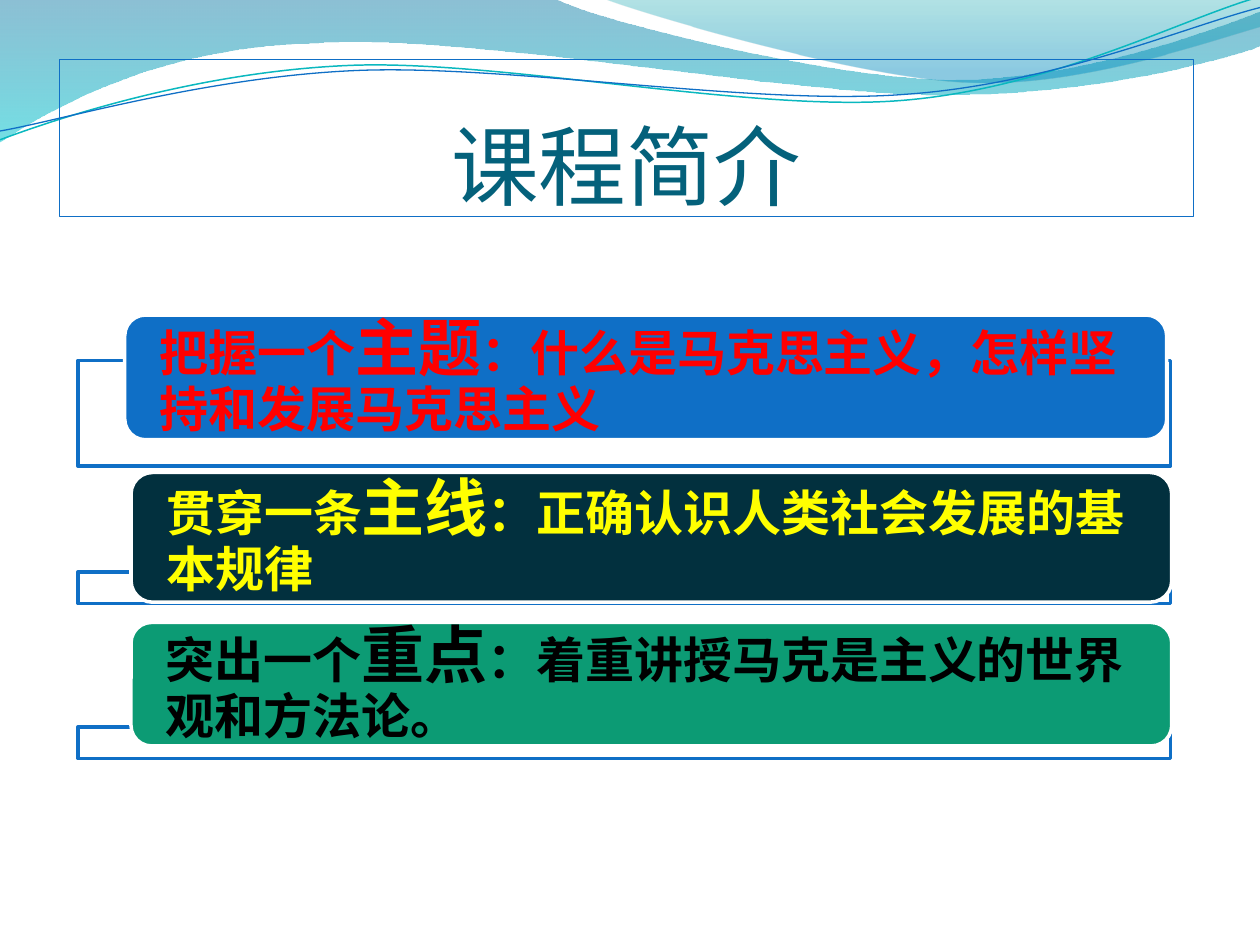
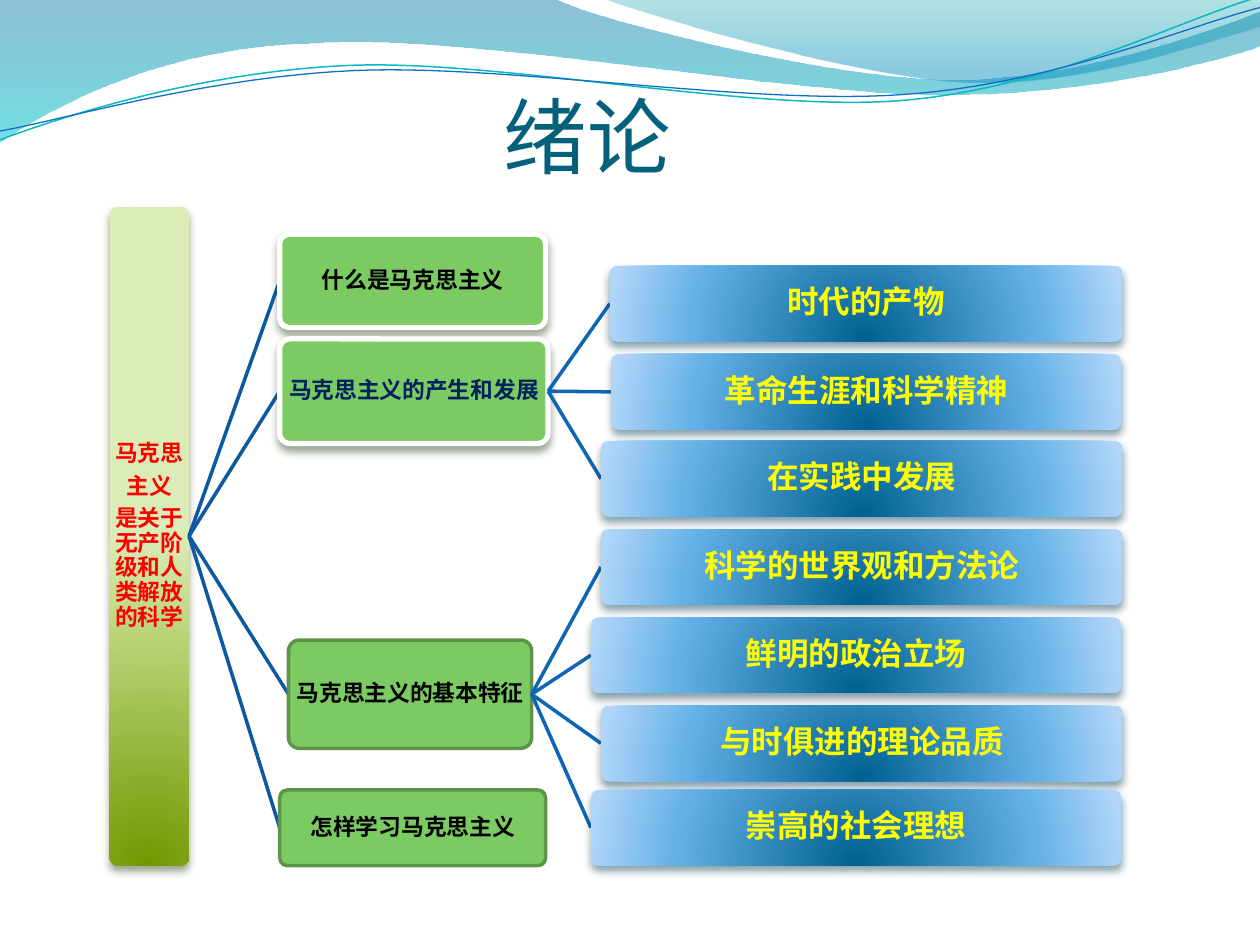
"""Build two course slides: the introduction and the outline of the preface."""
from lxml import etree
from pptx import Presentation
from pptx.dml.color import RGBColor as RGB
from pptx.enum.shapes import MSO_CONNECTOR as CONNECTOR, MSO_SHAPE as SHAPE
from pptx.enum.text import MSO_ANCHOR as ANCHOR, MSO_AUTO_SIZE as AUTO_SIZE, PP_ALIGN as ALIGN
from pptx.oxml.ns import qn
from pptx.util import Inches, Pt

WHITE = RGB(0xFF, 0xFF, 0xFF)
BLACK = RGB(0x00, 0x00, 0x00)
RED = RGB(0xFF, 0x00, 0x00)
YELLOW = RGB(0xFF, 0xFF, 0x00)
NAVY = RGB(0x00, 0x20, 0x60)
BLUE = RGB(0x0F, 0x6F, 0xC6)
TEAL = RGB(0x0A, 0xB8, 0xBF)
TITLE_COLOR = RGB(0x04, 0x61, 0x7B)
DARK_TEAL = RGB(0x02, 0x30, 0x3E)
SEA_GREEN = RGB(0x0C, 0x9B, 0x74)
GREEN = RGB(0x7C, 0xCA, 0x62)
GREEN_EDGE = RGB(0x5C, 0x95, 0x49)
BRANCH_BLUE = RGB(0x0C, 0x59, 0x9F)
LEAF_BLUE = RGB(0x0E, 0x65, 0xB4)
OLIVE_STOPS = [(0, "729800", 100), (68, "B8D275", 100), (100, "DBECB9", 100)]
BLUE_STOPS = [(0, "006091", 100), (68, "64B1E7", 100), (100, "B1D6F9", 100)]
TOPIC_FONT = "Vollkorn"


def set_gradient(shape, stops, radial):
    """Fill a shape with (position, colour, opacity) stops."""
    shape.fill.background()
    no_fill = shape.element.spPr.find(qn("a:noFill"))
    gradient = etree.Element(qn("a:gradFill"), rotWithShape="1")
    stop_list = etree.SubElement(gradient, qn("a:gsLst"))
    for position, color, opacity in stops:
        stop = etree.SubElement(stop_list, qn("a:gs"), pos=str(position * 1000))
        paint = etree.SubElement(stop, qn("a:srgbClr"), val=color)
        if opacity < 100:
            etree.SubElement(paint, qn("a:alpha"), val=str(opacity * 1000))
    if radial:
        circle = etree.SubElement(gradient, qn("a:path"), path="circle")
        etree.SubElement(circle, qn("a:fillToRect"), l="50000", t="130000", r="50000", b="-30000")
    else:
        etree.SubElement(gradient, qn("a:lin"), ang="5400000", scaled="0")
    no_fill.getparent().replace(no_fill, gradient)


def add_box(page, kind, frame, fill, edge=None, width=0, shadow=None):
    """Add a shape with a solid or radial fill, an edge and a soft shadow."""
    box = page.shapes.add_shape(kind, *[Inches(length) for length in frame])
    box.shadow.inherit = False
    if isinstance(fill, list):
        set_gradient(box, fill, True)
    else:
        box.fill.solid()
        box.fill.fore_color.rgb = fill
    if edge:
        box.line.color.rgb = edge
        box.line.width = Pt(width)
    else:
        box.line.fill.background()
    if shadow:
        effects = box.element.spPr.find(qn("a:effectLst"))
        outer = etree.SubElement(effects, qn("a:outerShdw"), blurRad=str(Pt(4.5)),
                                 dist=str(Pt(3)), dir="5400000", rotWithShape="0")
        paint = etree.SubElement(outer, qn("a:srgbClr"), val=shadow)
        etree.SubElement(paint, qn("a:alpha"), val="48000")
    return box


deck = Presentation()
deck.slide_width, deck.slide_height = Inches(10), Inches(7.5)
layout = deck.slide_layouts[5]
intro, outline = [deck.slides.add_slide(layout) for _ in range(2)]

waves = [
    ((0, 0), [[(4.4, -0.01)], [(4.76, 0.17), (6.64, 0.63), (7.58, 0.63)],
              [(8.53, 0.63), (9.58, 0.26), (10, 0.09)], [(10.01, 0.36)],
              [(9.83, 0.44), (8.7, 0.76), (7.46, 0.75)],
              [(6.22, 0.75), (3.82, 0.28), (2.57, 0.34)],
              [(1.29, 0.36), (0.46, 0.83), (-0.01, 1.13)], [(0, 0)]],
     [(0, "0074A1", 45), (100, "00C6CF", 55)], None, 0),
    ((4.79, -0.01), [[(5.09, 0.11), (6.82, 0.62), (7.69, 0.65)],
                     [(8.56, 0.69), (9.61, 0.32), (10, 0.21)], [(10, 0)], [(4.79, -0.01)]],
     [(0, "00A1A9", 30), (80, "008BBF", 45)], None, 0),
    ((0, 1.11), [[(0.48, 0.93), (1.58, 0.57), (2.77, 0.52)],
                 [(3.95, 0.47), (5.93, 0.89), (7.13, 0.8)],
                 [(8.33, 0.71), (9.38, 0.15), (9.98, -0.02)]], None, TEAL, 0.85),
    ((0, 1.04), [[(0.47, 0.96), (1.64, 0.61), (2.83, 0.56)],
                 [(4.03, 0.51), (5.97, 0.84), (7.17, 0.75)],
                 [(8.36, 0.67), (9.41, 0.21), (10, 0.06)]], None, BLUE, 0.75),
]
for order, (start, segments, stops, color, width) in enumerate(waves):
    builder = intro.shapes.build_freeform(Inches(start[0]), Inches(start[1]))
    points = [(Inches(x), Inches(y)) for segment in segments for x, y in segment]
    builder.add_line_segments(points, close=bool(stops))
    wave = builder.convert_to_shape()
    wave.shadow.inherit = False
    strokes = iter(list(wave.element.iter(qn("a:lnTo"))))
    for segment in segments:
        pieces = [next(strokes) for _ in segment]
        if len(pieces) == 3:
            curve = etree.Element(qn("a:cubicBezTo"))
            pieces[0].addprevious(curve)
            for piece in pieces:
                curve.append(piece[0])
                piece.getparent().remove(piece)
    if stops:
        set_gradient(wave, stops, False)
        wave.line.fill.background()
    else:
        wave.fill.background()
        wave.line.color.rgb = color
        wave.line.width = Pt(width)
    deck.slide_master.shapes.element.insert(2 + order, wave.element)

titles = [
    (intro, "课程简介", (0.47, 0.47, 9, 1.25), "Calibri", 50, 0, 0),
    (outline, "绪论", (0.39, 0.78, 9, 1.17), "Arial", 47.7, 0.46, 0.48),
]
for page, text, frame, font, size, right, bottom in titles:
    title = page.shapes.title
    title.left, title.top, title.width, title.height = [Inches(length) for length in frame]
    text_frame = title.text_frame
    text_frame.auto_size = AUTO_SIZE.NONE
    text_frame.vertical_anchor = ANCHOR.BOTTOM
    text_frame.margin_left, text_frame.margin_top = 0, Inches(0.05)
    text_frame.margin_right, text_frame.margin_bottom = Inches(right), Inches(bottom)
    para = text_frame.paragraphs[0]
    para.alignment = ALIGN.CENTER
    span = para.add_run()
    span.text = text
    span.font.name, span.font.size, span.font.color.rgb = font, Pt(size), TITLE_COLOR
intro.shapes.title.line.color.rgb = BLUE
intro.shapes.title.line.width = Pt(0.75)

goals = [
    ((2.86, 0.84), (0.99, 2.5, 8.27, 0.99), BLUE, RED,
     ("把握一个", "主题", "：什么是马克思主义，怎样坚持和发展马克思主义")),
    ((4.54, 0.25), (1.04, 3.75, 8.26, 1.03), DARK_TEAL, YELLOW,
     ("贯穿一条", "主线", "：正确认识人类社会发展的基本规律")),
    ((5.77, 0.25), (1.04, 4.94, 8.26, 0.98), SEA_GREEN, BLACK,
     ("突出一个", "重点", "：着重讲授马克是主义的世界观和方法论。")),
]
for (top, height), frame, fill, color, texts in goals:
    add_box(intro, SHAPE.RECTANGLE, (0.62, top, 8.67, height), WHITE, BLUE, 2)
    goal = add_box(intro, SHAPE.ROUNDED_RECTANGLE, frame, fill, WHITE, 2)
    text_frame = goal.text_frame
    text_frame.word_wrap = True
    text_frame.vertical_anchor = ANCHOR.MIDDLE
    text_frame.margin_left = text_frame.margin_right = Inches(0.23)
    text_frame.margin_top = text_frame.margin_bottom = 0
    para = text_frame.paragraphs[0]
    para.alignment = ALIGN.LEFT
    para.line_spacing = 0.9
    for text, size in zip(texts, (28, 36, 28)):
        span = para.add_run()
        span.text = text
        span.font.name, span.font.size, span.font.bold = TOPIC_FONT, Pt(size), True
        span.font.color.rgb = color

root_style = (OLIVE_STOPS, None, 0, "3A4519", "Arial", 13, None)
raised_style = (GREEN, WHITE, 3, "2B4821", TOPIC_FONT, 13, BRANCH_BLUE)
flat_style = (GREEN, GREEN_EDGE, 2, None, TOPIC_FONT, 13, BRANCH_BLUE)
leaf_style = (BLUE_STOPS, None, 0, "00374C", TOPIC_FONT, 18, LEAF_BLUE)
ROOT, ORIGIN, FEATURES = "马克思\n主义\n是关于无产阶级和人类解放的科学", "马克思主义的产生和发展", "马克思主义的基本特征"
nodes = [
    (None, ROOT, (0.87, 1.64, 0.63, 5.23), root_style, RED),
    (ROOT, "什么是马克思主义", (2.22, 1.86, 2.11, 0.74), raised_style, BLACK),
    (ROOT, ORIGIN, (2.22, 2.69, 2.13, 0.83), raised_style, NAVY),
    (ROOT, FEATURES, (2.29, 5.08, 1.93, 0.86), flat_style, BLACK),
    (ROOT, "怎样学习马克思主义", (2.22, 6.27, 2.11, 0.6), flat_style, BLACK),
]
leaves = [
    (ORIGIN, "时代的产物", 4.84, 2.11, 8.91),
    (ORIGIN, "革命生涯和科学精神", 4.85, 2.81, 8.9),
    (ORIGIN, "在实践中发展", 4.77, 3.5, 8.91),
    (FEATURES, "科学的世界观和方法论", 4.77, 4.2, 8.91),
    (FEATURES, "鲜明的政治立场", 4.69, 4.9, 8.9),
    (FEATURES, "与时俱进的理论品质", 4.77, 5.6, 8.91),
    (FEATURES, "崇高的社会理想", 4.69, 6.27, 8.9),
]
for parent, text, left, top, right in leaves:
    nodes.append((parent, text, (left, top, right - left, 0.6), leaf_style, YELLOW))

exits = {}
for parent, text, frame, style, color in nodes:
    fill, edge, width, shadow, font, size, link_color = style
    left, top, box_width, height = frame
    middle = top + height / 2
    exits[text] = (Inches(left + box_width), Inches(middle))
    if parent:
        link = outline.shapes.add_connector(CONNECTOR.STRAIGHT, *exits[parent],
                                            Inches(left), Inches(middle))
        link.line.color.rgb = link_color
        link.line.width = Pt(2)
        etree.SubElement(link.element.spPr, qn("a:effectLst"))
    node = add_box(outline, SHAPE.ROUNDED_RECTANGLE, frame, fill, edge, width, shadow)
    node.adjustments[0] = 0.1
    text_frame = node.text_frame
    text_frame.word_wrap = True
    text_frame.vertical_anchor = ANCHOR.MIDDLE
    text_frame.margin_left = text_frame.margin_right = Inches(0.01)
    text_frame.margin_top = text_frame.margin_bottom = Inches(0.01)
    for index, line in enumerate(text.split("\n")):
        para = text_frame.add_paragraph() if index else text_frame.paragraphs[0]
        para.alignment = ALIGN.CENTER
        para.line_spacing = 0.9
        para.space_before = Pt(4.5 if index else 0)
        span = para.add_run()
        span.text = line
        span.font.name, span.font.size, span.font.bold = font, Pt(size), True
        span.font.color.rgb = color

deck.save("out.pptx")
